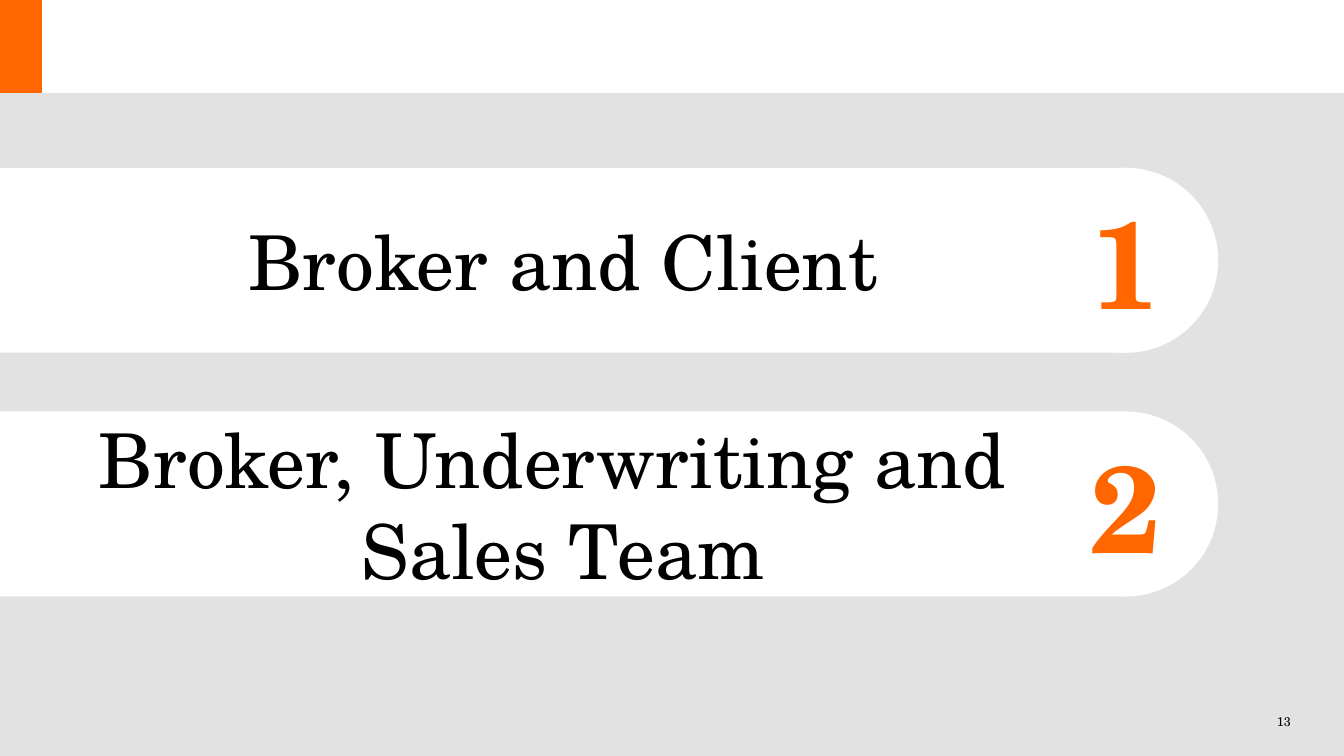
import pptx
import pptx.util
import pptx.dml.color
import pptx.enum.shapes
import pptx.enum.text

Cm = pptx.util.Cm
SHAPES = pptx.enum.shapes.MSO_SHAPE
ALIGN = pptx.enum.text.PP_ALIGN
MIDDLE = pptx.enum.text.MSO_ANCHOR.MIDDLE

FONT = "TeX Gyre Schola"
ORANGE, GREY, WHITE, BLACK = "FF6600", "E2E2E2", "FFFFFF", "000000"
PAGE_WIDTH, PAGE_HEIGHT = 33.87, 19.05
HEADER_HEIGHT = 2.34
BAR_TOP, BAR_STEP = 4.23, 6.14
BAR_WIDTH, BAR_HEIGHT = 28.37, 4.66
STEPS = [["Broker and Client"], ["Broker, Underwriting and ", "Sales Team"]]


def set_color(target, value):
    target.rgb = pptx.dml.color.RGBColor.from_string(value)


def add_block(page, kind, left, top, width, height, fill):
    block = page.shapes.add_shape(kind, Cm(left), Cm(top), Cm(width), Cm(height))
    block.shadow.inherit = False
    block.fill.solid()
    set_color(block.fill.fore_color, fill)
    block.line.fill.background()
    return block


def write(box, lines, size, color, bold=False, align=ALIGN.CENTER):
    frame = box.text_frame
    frame.word_wrap = True
    frame.vertical_anchor = MIDDLE
    style = {"name": FONT, "size": pptx.util.Pt(size), "bold": bold}
    for index, line in enumerate(lines):
        para = frame.add_paragraph() if index else frame.paragraphs[0]
        para.alignment = align
        span = para.add_run()
        span.text = line
        for key, value in style.items():
            setattr(span.font, key, value)
        set_color(span.font.color, color)


def add_page_number(page, number):
    box = page.shapes.add_textbox(Cm(30.73), Cm(17.93), Cm(1.8), Cm(0.51))
    for side in ("left", "right", "top", "bottom"):
        setattr(box.text_frame, f"margin_{side}", 0)
    write(box, [number], 9, BLACK, align=ALIGN.RIGHT)


def add_step(page, number, lines):
    top = BAR_TOP + (number - 1) * BAR_STEP
    bar = add_block(page, SHAPES.RECTANGLE, 0, top, BAR_WIDTH, BAR_HEIGHT, WHITE)
    write(bar, lines, 54, BLACK)
    badge_left = BAR_WIDTH - BAR_HEIGHT / 2
    badge = add_block(page, SHAPES.OVAL, badge_left, top, BAR_HEIGHT, BAR_HEIGHT, WHITE)
    write(badge, [str(number)], 88, ORANGE, bold=True)


def main():
    deck = pptx.Presentation()
    deck.slide_width, deck.slide_height = Cm(PAGE_WIDTH), Cm(PAGE_HEIGHT)
    page = deck.slides.add_slide(deck.slide_layouts[6])
    add_block(page, SHAPES.RECTANGLE, 0, HEADER_HEIGHT, PAGE_WIDTH,
              PAGE_HEIGHT - HEADER_HEIGHT, GREY)
    add_page_number(page, "13")
    add_block(page, SHAPES.RECTANGLE, 0, 0, 1.06, HEADER_HEIGHT, ORANGE)
    for number, lines in enumerate(STEPS, 1):
        add_step(page, number, lines)
    deck.save("out.pptx")


if __name__ == "__main__":
    main()
